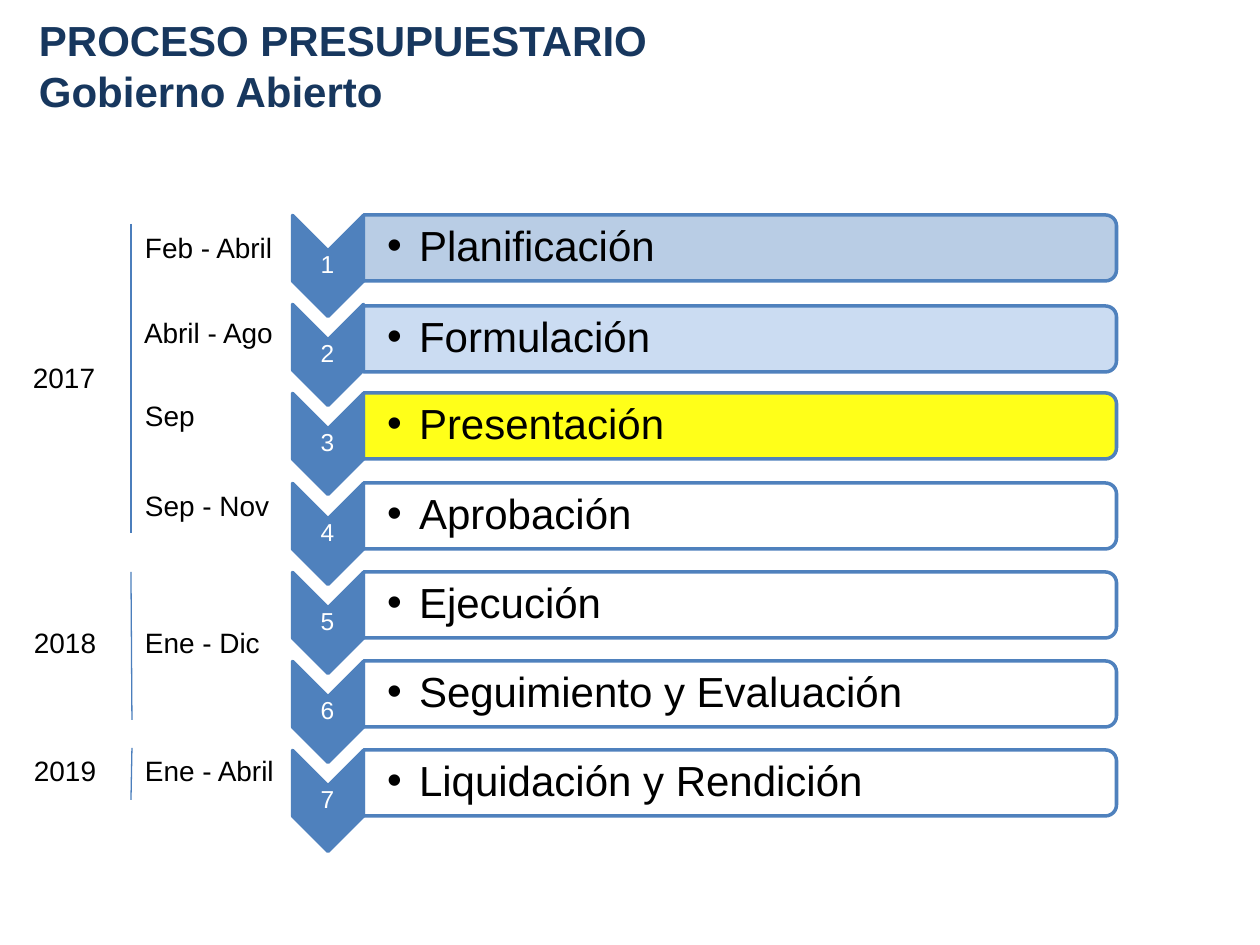
from lxml import etree
from pptx import Presentation
from pptx import util as u
from pptx.dml.color import RGBColor
from pptx.enum import shapes, text
from pptx.oxml.ns import qn

NAVY = RGBColor(0x17, 0x37, 0x5E)
BLUE = RGBColor(0x4F, 0x81, 0xBD)
RULE_BLUE = RGBColor(0x4B, 0x7E, 0xBC)
STEEL = RGBColor(0xB9, 0xCD, 0xE5)
PALE = RGBColor(0xC6, 0xD9, 0xF1)
YELLOW = RGBColor(0xFF, 0xFF, 0x00)
WHITE = RGBColor(0xFF, 0xFF, 0xFF)
BLACK = RGBColor(0x00, 0x00, 0x00)

STAGES = [
    ("Planificación", STEEL, 100, 0),
    ("Formulación", PALE, 90, 2),
    ("Presentación", YELLOW, 90, 0),
    ("Aprobación", WHITE, 90, 0),
    ("Ejecución", WHITE, 90, 0),
    ("Seguimiento y Evaluación", WHITE, 90, 0),
    ("Liquidación y Rendición", WHITE, 90, 0),
]
PERIODS = [
    ("Feb - Abril", 132, 224),
    ("Abril - Ago", 131, 310),
    ("Sep", 132, 393),
    ("Sep - Nov", 132, 483),
    ("Ene - Dic", 132, 620),
    ("Ene - Abril", 132, 748),
]
YEAR_RULES = [(131, 224, 131, 533), (131, 572, 132, 720), (132, 748, 131, 800)]
YEARS = [("2017", 5, 355), ("2018", 6, 620), ("2019", 6, 748)]
STAGES_SPAN = 535


def px(length):
    """Turn pixels into EMU."""
    return u.Emu(round(length * 914400 / 126))


def add_text(slide, box, lines, size, color, align=None, bold=False,
             insets=(13, 6, 13, 6), anchor=text.MSO_ANCHOR.TOP, grow=False):
    """Add a text box with its lines split by breaks and return its paragraph."""
    frame = slide.shapes.add_textbox(*map(px, box)).text_frame
    frame.word_wrap = True
    if grow:
        frame.auto_size = text.MSO_AUTO_SIZE.SHAPE_TO_FIT_TEXT
    frame.vertical_anchor = anchor
    frame.margin_left, frame.margin_top, frame.margin_right, frame.margin_bottom = map(px, insets)
    paragraph = frame.paragraphs[0]
    paragraph.alignment = align
    for index, line in enumerate(lines):
        if index:
            paragraph.add_line_break()
        run = paragraph.add_run()
        run.text = line
        run.font.name = "Arial"
        run.font.size = u.Pt(size)
        run.font.bold = bold
        run.font.color.rgb = color
    return paragraph


def add_turned(slide, preset, center_x, center_y, width, height, fill, opacity=100):
    """Add an outlined shape turned a quarter clockwise about its centre."""
    shape = slide.shapes.add_shape(
        preset, px(center_x - width / 2), px(center_y - height / 2), px(width), px(height))
    shape.rotation = 90
    shape.shadow.inherit = False
    shape.fill.solid()
    shape.fill.fore_color.rgb = fill
    if opacity < 100:
        tint = shape.fill._xPr.find(qn("a:solidFill"))[0]
        etree.SubElement(tint, qn("a:alpha"), val=str(opacity * 1000))
    shape.line.color.rgb = BLUE
    shape.line.width = u.Pt(2)


def add_bullet(paragraph):
    """Give a paragraph a round bullet with a hanging indent."""
    paragraph.level = 1
    properties = paragraph._p.get_or_add_pPr()
    properties.set("marL", str(px(32)))
    properties.set("indent", str(-px(32)))
    etree.SubElement(properties, qn("a:buFont"), typeface="Arial")
    etree.SubElement(properties, qn("a:buChar"), char="•")


def add_stage(slide, number, name, fill, opacity, nudge):
    """Add a numbered chevron with its named bar."""
    offset = round((number - 1) * STAGES_SPAN / (len(STAGES) - 1))
    chevron_y = 266 + offset
    bar_y = 248 + offset + nudge
    add_turned(slide, shapes.MSO_SHAPE.CHEVRON, 328, chevron_y, 101, 71, BLUE)
    label = add_text(slide, (292, chevron_y - 15, 71, 30), [str(number)], 14, WHITE,
                     text.PP_ALIGN.CENTER, insets=(1, 1, 1, 1), anchor=text.MSO_ANCHOR.MIDDLE)
    label.line_spacing = 0.9
    add_turned(slide, shapes.MSO_SHAPE.ROUND_2_SAME_RECTANGLE, 740, bar_y, 66, 753, fill, opacity)
    title = add_text(slide, (363, bar_y - 30, 750, 60), [name], 24, BLACK,
                     insets=(24, 2, 2, 2), anchor=text.MSO_ANCHOR.MIDDLE)
    title.line_spacing = 0.9
    add_bullet(title)


def add_rule(slide, ends):
    """Add a thin line between a year and its periods."""
    rule = slide.shapes.add_connector(shapes.MSO_CONNECTOR.STRAIGHT, *map(px, ends))
    rule.line.color.rgb = RULE_BLUE
    rule.line.width = u.Pt(0.75)
    etree.SubElement(rule._element.spPr, qn("a:effectLst"))


def main():
    """Build the budget process slide."""
    deck = Presentation()
    deck.slide_width, deck.slide_height = px(1260), px(945)
    slide = deck.slides.add_slide(deck.slide_layouts[6])
    add_text(slide, (26, 0, 833, 130), ["PROCESO PRESUPUESTARIO", "Gobierno Abierto"],
             24, NAVY, bold=True, anchor=text.MSO_ANCHOR.MIDDLE)
    for number, stage in enumerate(STAGES, start=1):
        add_stage(slide, number, *stage)
    for period, left, top in PERIODS:
        add_text(slide, (left, top, 169, 47), [period], 16, BLACK, grow=True)
    for ends in YEAR_RULES:
        add_rule(slide, ends)
    for year, left, top in YEARS:
        add_text(slide, (left, top, 118, 47), [year], 16, BLACK, text.PP_ALIGN.CENTER, grow=True)
    deck.save("out.pptx")


if __name__ == "__main__":
    main()
